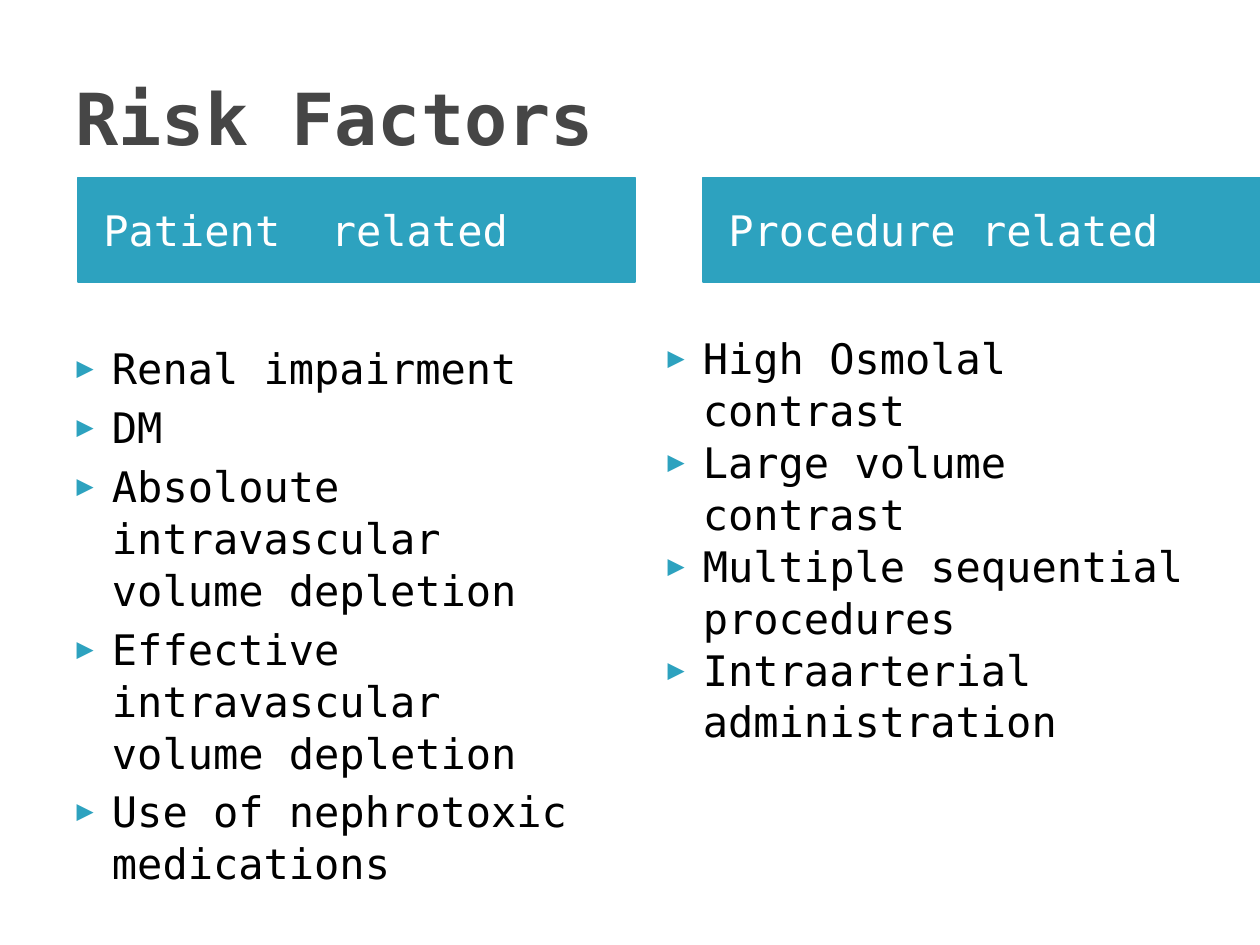
from dataclasses import dataclass

from lxml.etree import SubElement
from pptx import Presentation
from pptx.dml.color import RGBColor as Color
from pptx.enum.shapes import MSO_SHAPE as Shape
from pptx.enum.text import MSO_ANCHOR as Anchor, MSO_AUTO_SIZE as Fit, PP_ALIGN as Align
from pptx.oxml.ns import qn
from pptx.util import Inches, Pt


@dataclass(frozen=True)
class Theme:
    """Colours, typeface and type sizes of the page."""
    accent: Color = Color(0x2D, 0xA2, 0xBF)
    heading: Color = Color(0x46, 0x46, 0x46)
    ink: Color = Color(0, 0, 0)
    paper: Color = Color(255, 255, 255)
    face: str = "DejaVu Sans Mono"
    title_size: Pt = Pt(41)
    body_size: Pt = Pt(24)
    leading: float = 1.03


def apply(target, values):
    """Set every attribute named in values on target."""
    for name, value in values.items():
        setattr(target, name, value)


class Painter:
    """Draws styled elements on the current page."""

    def __init__(self, page, theme):
        """Keep the page and its theme."""
        self.page, self.theme = page, theme

    def add_span(self, para, text, size, color, bold=False):
        """Fill a paragraph with one styled run."""
        span = para.add_run()
        span.text = text
        apply(span.font, {"name": self.theme.face, "size": size, "bold": bold})
        span.font.color.rgb = color

    def title(self, text, left, top, width, height):
        """Place and fill the title placeholder."""
        box = self.page.shapes.title
        apply(box, {"left": Inches(left), "top": Inches(top),
                    "width": Inches(width), "height": Inches(height)})
        apply(box.text_frame, {"auto_size": Fit.NONE, "vertical_anchor": Anchor.MIDDLE})
        para = box.text_frame.paragraphs[0]
        para.alignment = Align.LEFT
        self.add_span(para, text, self.theme.title_size, self.theme.heading, True)

    def banner(self, text, left, top, width, height):
        """Draw a filled column heading."""
        box = self.page.shapes.add_shape(
            Shape.RECTANGLE, *map(Inches, (left, top, width, height)))
        box.shadow.inherit = False
        box.fill.solid()
        box.fill.fore_color.rgb = self.theme.accent
        box.line.color.rgb = self.theme.accent
        box.line.width = Pt(0.75)
        apply(box.text_frame, {"word_wrap": True, "vertical_anchor": Anchor.MIDDLE,
                               "margin_left": Inches(0.2)})
        para = box.text_frame.paragraphs[0]
        para.alignment = Align.LEFT
        self.add_span(para, text, self.theme.body_size, self.theme.paper)

    def bullet(self, para):
        """Give a paragraph a hanging triangle bullet."""
        props = para._p.get_or_add_pPr()
        props.set("marL", str(Inches(0.4)))
        props.set("indent", str(Inches(-0.28)))
        color = SubElement(props, qn("a:buClr"))
        SubElement(color, qn("a:srgbClr"), val=str(self.theme.accent))
        SubElement(props, qn("a:buSzPct"), val="68000")
        SubElement(props, qn("a:buFont"), typeface=self.theme.face)
        SubElement(props, qn("a:buChar"), char="▶")

    def bullets(self, items, gap, left, top, width, height):
        """Add a bulleted list with a gap between its items."""
        box = self.page.shapes.add_textbox(*map(Inches, (left, top, width, height)))
        frame = box.text_frame
        frame.word_wrap = True
        for index, item in enumerate(items):
            para = frame.add_paragraph() if index else frame.paragraphs[0]
            self.bullet(para)
            apply(para, {"line_spacing": self.theme.leading,
                         "space_before": Pt(gap if index else 0)})
            self.add_span(para, item, self.theme.body_size, self.theme.ink)


def main():
    """Build and save the deck."""
    deck = Presentation()
    apply(deck, {"slide_width": Inches(10), "slide_height": Inches(7.5)})
    page = deck.slides.add_slide(deck.slide_layouts[5])
    painter = Painter(page, Theme())
    painter.title("Risk Factors", 0.5, 0.3, 9, 1.25)
    column_width = 4.42
    for text, left in (("Patient  related", 0.62), ("Procedure related", 5.58)):
        painter.banner(text, left, 1.41, column_width, 0.83)
    patient = ["Renal impairment", "DM",
               "Absoloute intravascular volume depletion",
               "Effective intravascular volume depletion",
               "Use of nephrotoxic medications"]
    procedure = ["High Osmolal contrast", "Large volume contrast",
                 "Multiple sequential procedures", "Intraarterial administration"]
    for items, gap, left, top in ((patient, 4, 0.39, 2.66), (procedure, 0, 5.08, 2.58)):
        painter.bullets(items, gap, left, top, column_width, 4.31)
    deck.save("out.pptx")


if __name__ == "__main__":
    main()
